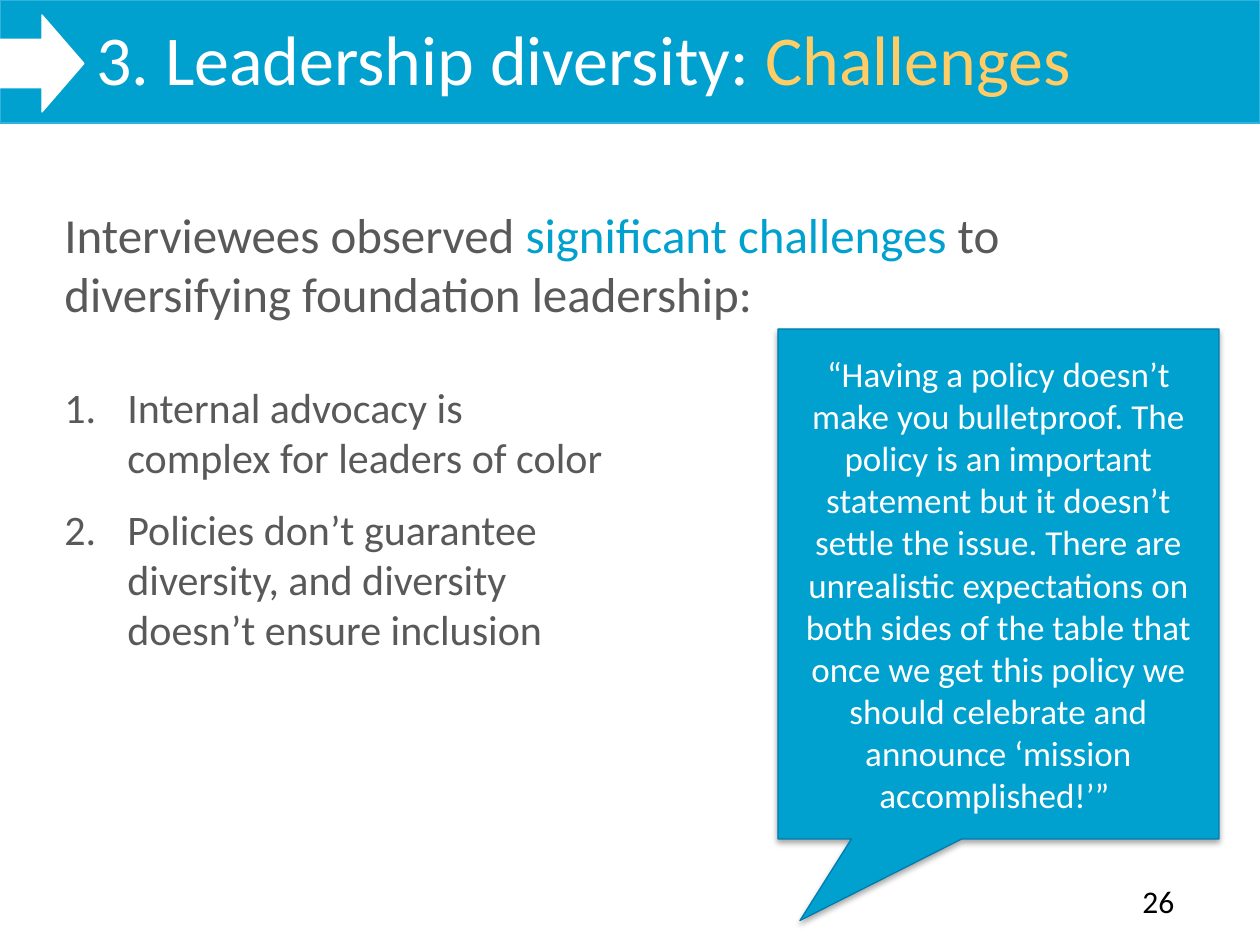
import pptx
import pptx.util
import pptx.dml.color
import pptx.enum.shapes
import pptx.enum.text
import pptx.oxml
import pptx.oxml.ns

RGB = pptx.dml.color.RGBColor
KIND = pptx.enum.shapes.MSO_SHAPE
BLUE = RGB(0x00, 0xA0, 0xCF)
SKY = RGB(0x32, 0xB2, 0xDD)
NAVY = RGB(0x00, 0x7C, 0xAE)
WHITE = RGB(0xFF, 0xFF, 0xFF)
GOLD = RGB(0xFF, 0xCC, 0x66)
GRAY = RGB(0x59, 0x59, 0x59)
BLACK = RGB(0x00, 0x00, 0x00)
FONT = "Calibri"
SCALE = 914400 / 126
SHADE = (
    f'<a:effectLst {pptx.oxml.ns.nsdecls("a")}>'
    '<a:outerShdw blurRad="39370" dist="22860" dir="5400000" rotWithShape="0">'
    '<a:srgbClr val="000000"><a:alpha val="35000"/></a:srgbClr>'
    '</a:outerShdw></a:effectLst>'
)


def px(size):
    return pptx.util.Emu(round(size * SCALE))


class Deck:
    """Holds the style and the current slide, and draws each kind of element."""

    def __init__(self, wide, high):
        self.file = pptx.Presentation()
        self.file.slide_width, self.file.slide_height = px(wide), px(high)
        self.slide = self.file.slides.add_slide(self.file.slide_layouts[6])

    def shape(self, kind, box, fill, line):
        shape = self.slide.shapes.add_shape(kind, *map(px, box))
        shape.shadow.inherit = False
        shape.fill.solid()
        shape.fill.fore_color.rgb = fill
        shape.line.color.rgb = line
        shape.line.width = pptx.util.Pt(0.75)
        return shape

    def letter(self, para, runs, size, after=0):
        para.font.size = pptx.util.Pt(size)
        para.font.name = FONT
        para.space_after = pptx.util.Pt(after)
        for words, color in runs:
            run = para.add_run()
            run.text = words
            run.font.color.rgb = color

    def text(self, box, paras, size, after=0, count=False):
        frame = self.slide.shapes.add_textbox(*map(px, box)).text_frame
        frame.word_wrap = True
        for spot, runs in enumerate(paras):
            para = frame.add_paragraph() if spot else frame.paragraphs[0]
            self.letter(para, runs, size, after)
            if count:
                self.number(para)

    def number(self, para):
        props = para._p.get_or_add_pPr()
        props.set("marL", str(px(63)))
        props.set("indent", str(px(-63)))
        mark = pptx.oxml.parse_xml(
            f'<a:buAutoNum {pptx.oxml.ns.nsdecls("a")} type="arabicPeriod"/>')
        props.insert_element_before(mark, "a:tabLst", "a:defRPr", "a:extLst")

    def quote(self, box, words, tip):
        shape = self.shape(KIND.RECTANGULAR_CALLOUT, box, BLUE, NAVY)
        shape.adjustments[0], shape.adjustments[1] = tip
        props = shape._element.spPr
        props.replace(props.find(pptx.oxml.ns.qn("a:effectLst")),
                      pptx.oxml.parse_xml(SHADE))
        frame = shape.text_frame
        frame.word_wrap = True
        frame.vertical_anchor = pptx.enum.text.MSO_ANCHOR.MIDDLE
        para = frame.paragraphs[0]
        para.alignment = pptx.enum.text.PP_ALIGN.CENTER
        self.letter(para, [(words, WHITE)], 20)


def main():
    deck = Deck(1260, 945)
    deck.shape(KIND.RECTANGLE, (0, 0, 1260, 123), BLUE, SKY)
    deck.shape(KIND.RIGHT_ARROW, (0, 15, 84, 97), WHITE, WHITE)
    deck.text((84, 9, 1176, 157),
              [[("3. Leadership diversity: ", WHITE), ("Challenges", GOLD)]], 40)
    deck.text((1130, 876, 67, 50), [[("26", BLACK)]], 18)
    deck.text((52, 198, 1167, 131), [[
        ("Interviewees observed ", GRAY),
        ("significant challenges ", BLUE),
        ("to diversifying foundation leadership:", GRAY),
    ]], 28, after=12)
    deck.text((52, 375, 563, 411), [
        [("Internal advocacy is complex for leaders of color", GRAY)],
        [("Policies don’t guarantee diversity, and diversity "
          "doesn’t ensure inclusion", GRAY)],
    ], 24, after=12, count=True)
    deck.quote(
        (778, 329, 441, 510),
        "“Having a policy doesn’t make you bulletproof. The policy is an "
        "important statement but it doesn’t settle the issue. There are "
        "unrealistic expectations on both sides of the table that once we get "
        "this policy we should celebrate and announce ‘mission accomplished!’” ",
        (-0.45, 0.66))
    deck.file.save("out.pptx")


if __name__ == "__main__":
    main()
